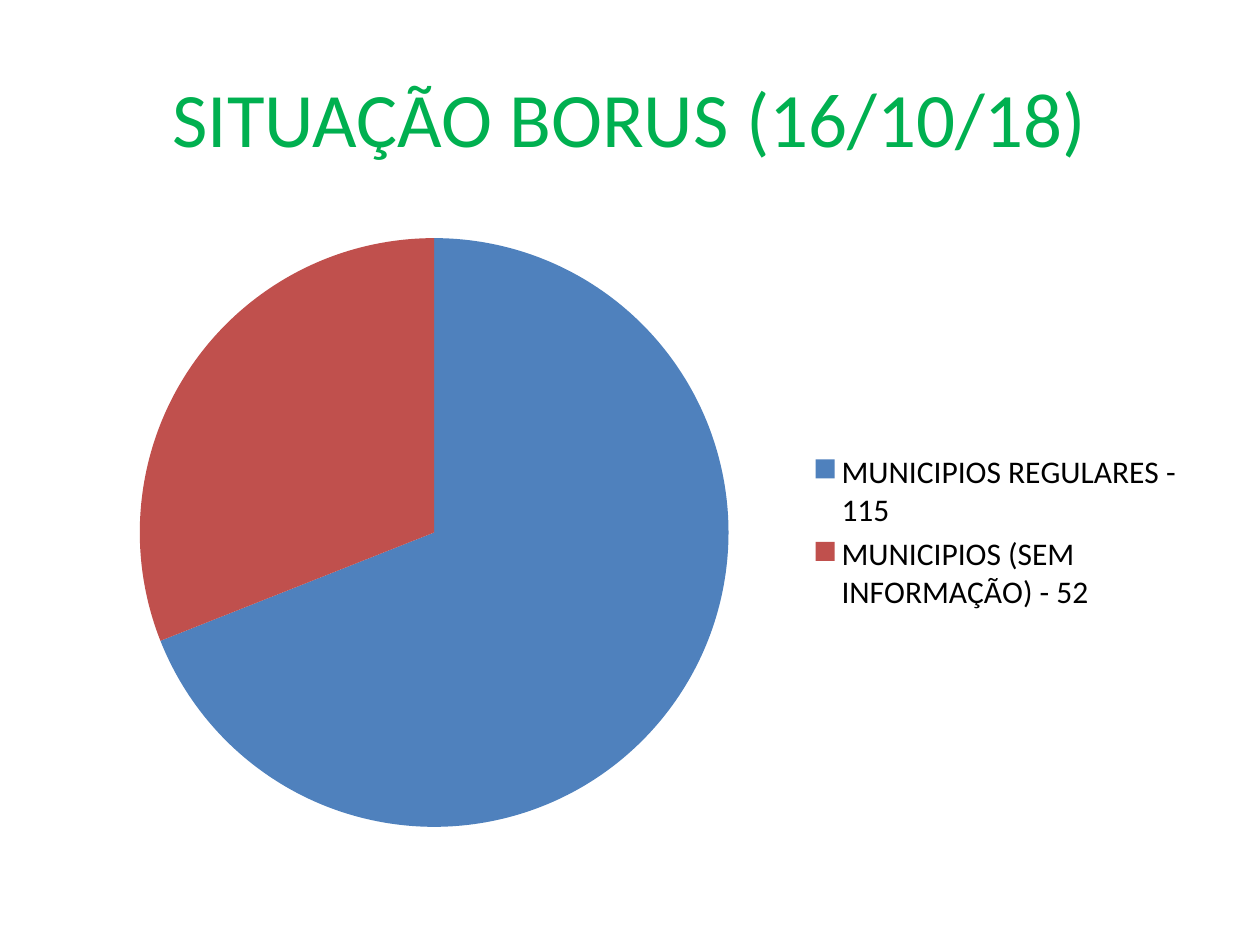
from pptx import Presentation
from pptx.chart.data import CategoryChartData
from pptx.dml.color import RGBColor
from pptx.enum.chart import XL_CHART_TYPE, XL_LEGEND_POSITION
from pptx.enum.text import MSO_ANCHOR, PP_ALIGN
from pptx.util import Cm, Pt

PIE = XL_CHART_TYPE.PIE
RIGHT = XL_LEGEND_POSITION.RIGHT
MIDDLE = MSO_ANCHOR.MIDDLE
CENTER = PP_ALIGN.CENTER

GREEN = RGBColor(0x00, 0xB0, 0x50)
BLUE = RGBColor(0x4F, 0x81, 0xBD)
RED = RGBColor(0xC0, 0x50, 0x4D)
BLACK = RGBColor(0x00, 0x00, 0x00)

MARGIN = 1.27
CONTENT_WIDTH = 25.4 - 2 * MARGIN

# Label, share in percent, slice colour
MUNICIPALITIES = [
    ("MUNICIPIOS REGULARES - 115", 69, BLUE),
    ("MUNICIPIOS (SEM INFORMAÇÃO) - 52", 31, RED),
]


class StatusSlide:
    """Holds the text style and the slide being built."""

    typeface = "Calibri"

    def __init__(self, slide):
        self.slide = slide

    def style(self, font, size, color):
        for name, value in {"name": self.typeface, "size": Pt(size)}.items():
            setattr(font, name, value)
        font.color.rgb = color

    def heading(self, wording, top, height):
        frame = self.slide.shapes.add_textbox(
            Cm(MARGIN), Cm(top), Cm(CONTENT_WIDTH), Cm(height)).text_frame
        for name, value in {"word_wrap": True, "vertical_anchor": MIDDLE}.items():
            setattr(frame, name, value)
        line = frame.paragraphs[0]
        line.alignment = CENTER
        run = line.add_run()
        run.text = wording
        self.style(run.font, 44, GREEN)

    def pie(self, slices, top, height):
        labels, shares, colors = zip(*slices)
        data = CategoryChartData()
        data.categories = labels
        data.add_series("Series 1", shares)
        chart = self.slide.shapes.add_chart(
            PIE, Cm(MARGIN), Cm(top), Cm(CONTENT_WIDTH), Cm(height), data).chart
        for name, value in {"has_title": False, "has_legend": True}.items():
            setattr(chart, name, value)
        self.style(chart.font, 18, BLACK)
        legend_format = {"position": RIGHT, "include_in_layout": False}
        for name, value in legend_format.items():
            setattr(chart.legend, name, value)

        # Slice colours
        plot = chart.plots[0]
        plot.vary_by_categories = True
        for index, color in enumerate(colors):
            fill = plot.series[0].points[index].format.fill
            fill.solid()
            fill.fore_color.rgb = color


def main():
    deck = Presentation()
    deck.slide_width, deck.slide_height = Cm(25.4), Cm(19.05)
    status = StatusSlide(deck.slides.add_slide(deck.slide_layouts[6]))

    # Title
    status.heading("SITUAÇÃO BORUS (16/10/18)", top=0.76, height=3.18)

    # Share of municipalities by status
    status.pie(MUNICIPALITIES, top=4.45, height=12.57)

    deck.save("out.pptx")


if __name__ == "__main__":
    main()
